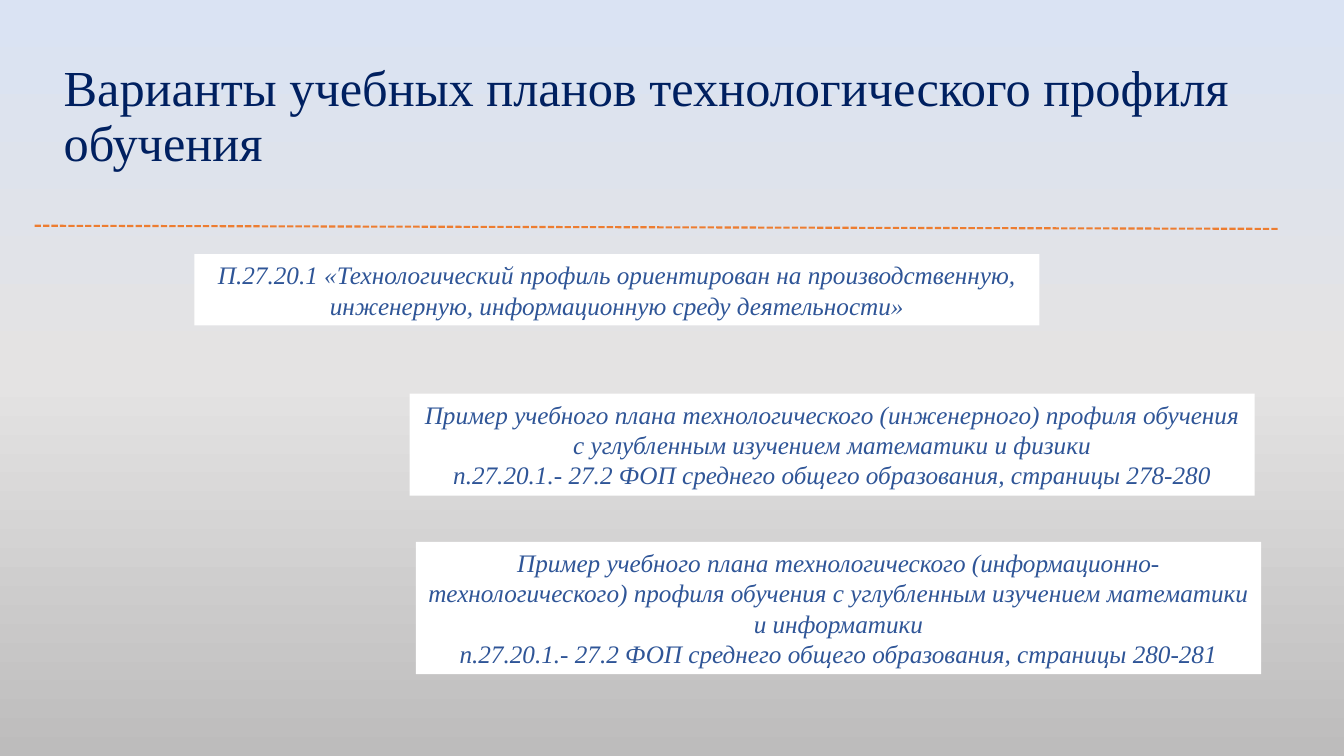
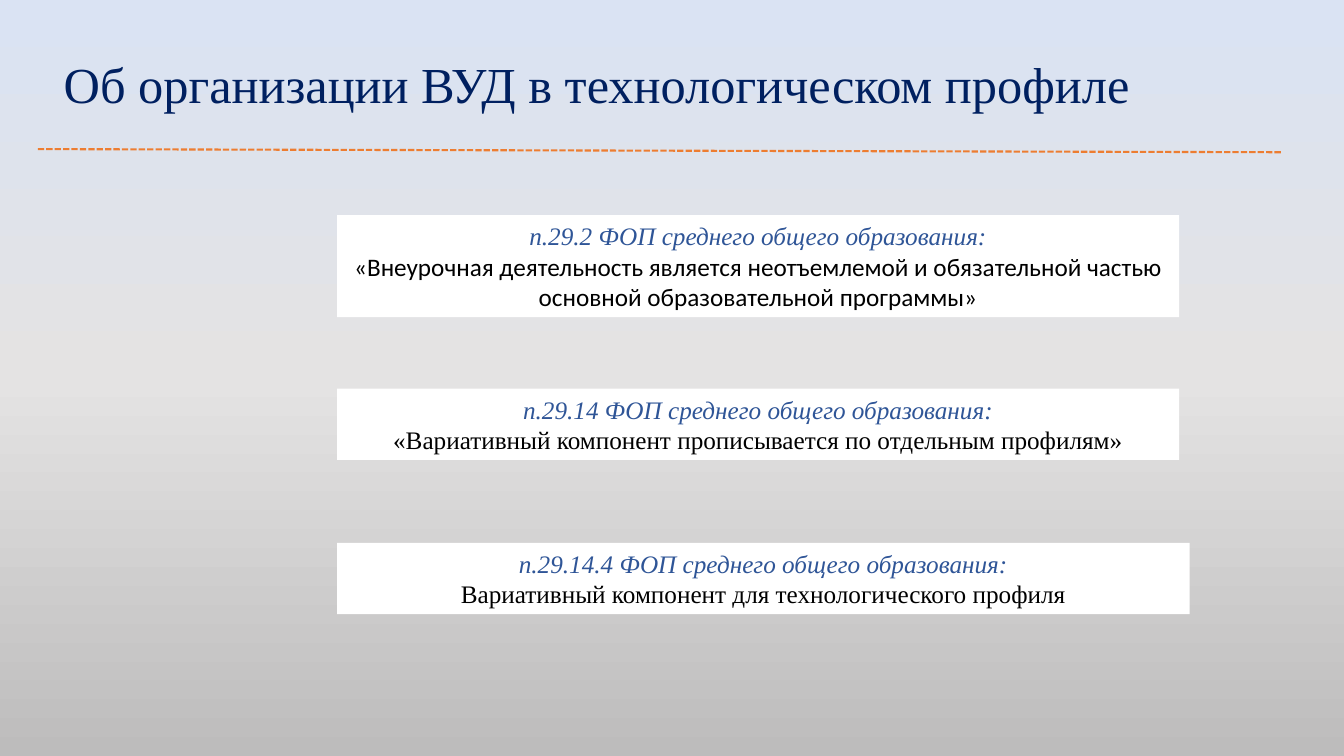
"""Build two slides about the technological study profile."""
from copy import deepcopy
from dataclasses import dataclass

from pptx import Presentation
from pptx.dml.color import RGBColor
from pptx.enum.dml import MSO_LINE
from pptx.enum.shapes import MSO_CONNECTOR, MSO_SHAPE
from pptx.enum.text import MSO_ANCHOR, MSO_AUTO_SIZE, PP_ALIGN
from pptx.oxml.ns import qn
from pptx.util import Emu, Pt

EMU_PER_PX = 9525
SLIDE_WIDTH, SLIDE_HEIGHT = 1280, 720
TITLE_LEFT, TITLE_TOP, TITLE_WIDTH = 51, 23, 1185
RULE_WIDTH, RULE_DROP = 1185, 3
TITLE_ONLY = 5
SERIF, SANS = "Times New Roman", "Calibri"
NAVY, BLUE, ORANGE = "002060", "2F5597", "ED7D31"
BLACK, WHITE = "000000", "FFFFFF"
BACKGROUND = ((0, "DAE3F3"), (0.5, "E4E3E3"), (1, "BDBCBC"))
TOP_OPACITY = "33000"
RECTANGLE = MSO_SHAPE.RECTANGLE
STRAIGHT = MSO_CONNECTOR.STRAIGHT
DASH = MSO_LINE.SQUARE_DOT
MIDDLE = MSO_ANCHOR.MIDDLE
LEFT, CENTER = PP_ALIGN.LEFT, PP_ALIGN.CENTER
NO_FIT, GROW = MSO_AUTO_SIZE.NONE, MSO_AUTO_SIZE.SHAPE_TO_FIT_TEXT


@dataclass(frozen=True)
class Line:
    """One paragraph of a card."""

    text: str
    font: str = SERIF
    color: str = BLUE
    italic: bool = True


@dataclass(frozen=True)
class Card:
    """A white text card, measured in px."""

    left: int
    top: int
    width: int
    height: int
    lines: tuple[Line, ...]


@dataclass(frozen=True)
class Topic:
    """A slide with its title, rule and cards."""

    title: str
    title_height: int
    rule_left: int
    rule_top: int
    cards: tuple[Card, ...]


TOPICS = (
    Topic("Варианты учебных планов технологического профиля обучения", 178, 33, 215, (
        Card(390, 375, 805, 97, (
            Line("Пример учебного плана технологического (инженерного) профиля обучения "
                 "с углубленным изучением математики и физики"),
            Line("п.27.20.1.- 27.2 ФОП среднего общего образования, страницы 278-280"),
        )),
        Card(396, 516, 805, 126, (
            Line("Пример учебного плана технологического (информационно-технологического) "
                 "профиля обучения с углубленным изучением математики и информатики"),
            Line("п.27.20.1.- 27.2 ФОП среднего общего образования, страницы 280-281"),
        )),
        Card(185, 242, 805, 68, (
            Line("П.27.20.1 «Технологический профиль ориентирован на производственную, "
                 "инженерную, информационную среду деятельности»"),
        )),
    )),
    Topic("Об организации ВУД в технологическом профиле", 120, 36, 142, (
        Card(321, 205, 802, 97, (
            Line("п.29.2 ФОП среднего общего образования:"),
            Line("«Внеурочная деятельность является неотъемлемой и обязательной частью "
                 "основной образовательной программы»", SANS, BLACK, False),
        )),
        Card(321, 517, 812, 68, (
            Line("п.29.14.4 ФОП среднего общего образования:"),
            Line("Вариативный компонент для технологического профиля", SERIF, BLACK, False),
        )),
        Card(321, 370, 802, 68, (
            Line("п.29.14 ФОП среднего общего образования:"),
            Line("«Вариативный компонент прописывается по отдельным профилям»",
                 SERIF, BLACK, False),
        )),
    )),
)


def px(length: int) -> Emu:
    """Turn px into EMU."""
    return Emu(length * EMU_PER_PX)


def rgb(color: str) -> RGBColor:
    """Turn a hex string into a colour."""
    return RGBColor.from_string(color)


def write(para, text: str, *, size: int, font: str = SERIF, color: str = BLACK,
          italic: bool = False, align=LEFT) -> None:
    """Fill a paragraph with one formatted span."""
    para.alignment = align
    span = para.add_run()
    span.text = text
    span.font.name = font
    span.font.size = Pt(size)
    span.font.italic = italic
    span.font.color.rgb = rgb(color)


def paint_background(master) -> None:
    """Give the master the vertical gradient that all slides share."""
    fill = master.background.fill
    fill.gradient()
    fill.gradient_angle = 270
    stop_list = next(master.element.cSld.iter(qn("a:gsLst")))
    stop_list.append(deepcopy(stop_list[-1]))
    for stop, (position, color) in zip(fill.gradient_stops, BACKGROUND):
        stop.position = position
        stop.color.rgb = rgb(color)
    top_color = stop_list[0][0]
    alpha = top_color.makeelement(qn("a:alpha"), {"val": TOP_OPACITY})
    top_color.append(alpha)


def set_title(page, text: str, height: int) -> None:
    """Move, fill and format the title placeholder."""
    title = page.shapes.title
    title.left, title.top = px(TITLE_LEFT), px(TITLE_TOP)
    title.width, title.height = px(TITLE_WIDTH), px(height)
    frame = title.text_frame
    frame.auto_size = NO_FIT
    frame.vertical_anchor = MIDDLE
    para = frame.paragraphs[0]
    para.line_spacing = 0.9
    write(para, text, size=36, color=NAVY)


def add_rule(page, left: int, top: int) -> None:
    """Draw the dashed rule below the title."""
    rule = page.shapes.add_connector(STRAIGHT, px(left), px(top),
                                     px(left + RULE_WIDTH), px(top + RULE_DROP))
    rule.line.color.rgb = rgb(ORANGE)
    rule.line.width = Pt(1.5)
    rule.line.dash_style = DASH
    properties = rule.element.spPr
    properties.append(properties.makeelement(qn("a:effectLst"), {}))


def add_card(page, card: Card) -> None:
    """Draw a white card with its centred lines."""
    box = page.shapes.add_shape(RECTANGLE, px(card.left), px(card.top),
                                px(card.width), px(card.height))
    box.shadow.inherit = False
    box.fill.solid()
    box.fill.fore_color.rgb = rgb(WHITE)
    box.line.fill.background()
    frame = box.text_frame
    frame.word_wrap = True
    frame.auto_size = GROW
    for index, line in enumerate(card.lines):
        para = frame.add_paragraph() if index else frame.paragraphs[0]
        write(para, line.text, size=18, font=line.font, color=line.color,
              italic=line.italic, align=CENTER)


def add_topic(deck, topic: Topic) -> None:
    """Add one slide."""
    page = deck.slides.add_slide(deck.slide_layouts[TITLE_ONLY])
    set_title(page, topic.title, topic.title_height)
    add_rule(page, topic.rule_left, topic.rule_top)
    for card in topic.cards:
        add_card(page, card)


def main() -> None:
    """Build and save the deck."""
    deck = Presentation()
    deck.slide_width, deck.slide_height = px(SLIDE_WIDTH), px(SLIDE_HEIGHT)
    paint_background(deck.slide_master)
    for topic in TOPICS:
        add_topic(deck, topic)
    deck.save("out.pptx")


if __name__ == "__main__":
    main()
